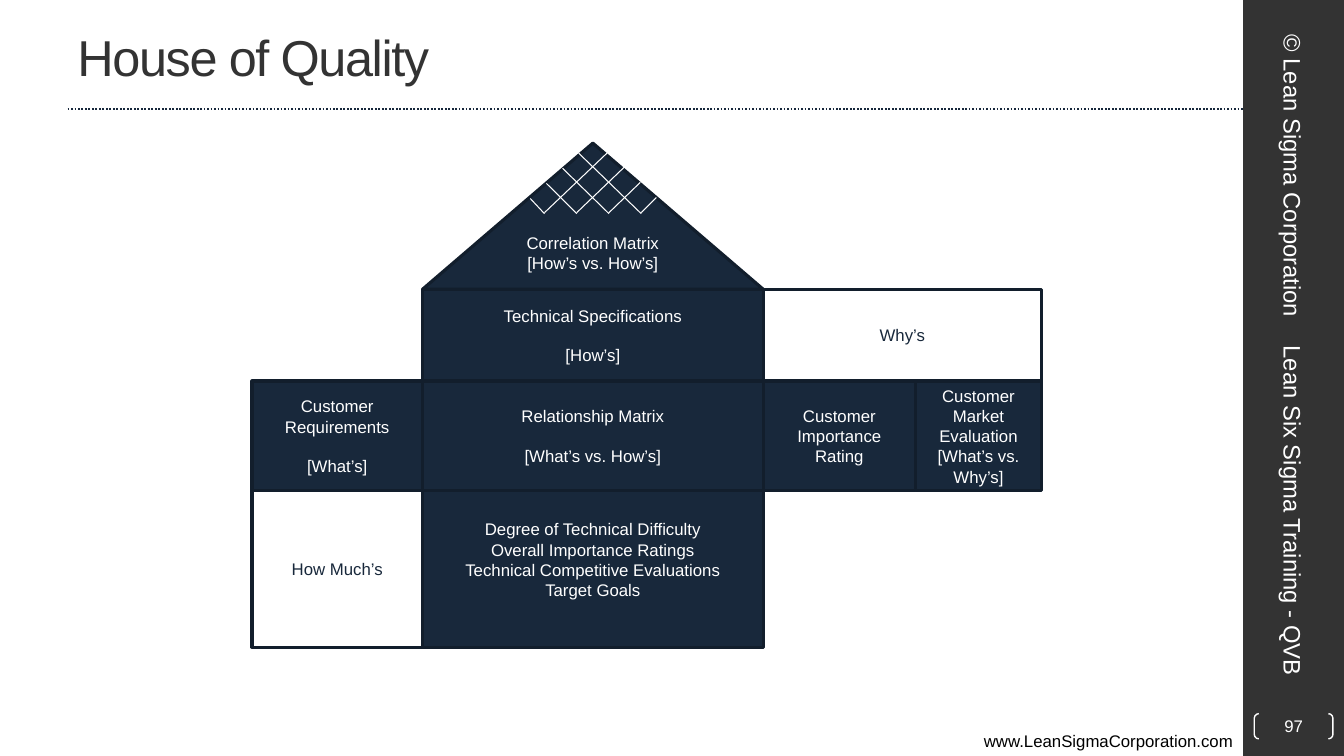
from lxml import etree
from pptx import Presentation
from pptx.dml.color import RGBColor
from pptx.enum.dml import MSO_LINE
from pptx.enum.shapes import MSO_CONNECTOR, MSO_SHAPE
from pptx.enum.text import MSO_ANCHOR, PP_ALIGN
from pptx.oxml.ns import qn
from pptx.util import Inches, Pt

THEME = {
    "font": "Arial",
    "navy": RGBColor.from_string("18283B"),
    "edge": RGBColor.from_string("121E2C"),
    "rule": RGBColor.from_string("17273B"),
    "gray": RGBColor.from_string("333333"),
    "white": RGBColor.from_string("FFFFFF"),
    "black": RGBColor.from_string("000000"),
    "title": Pt(36), "side": Pt(17), "body": Pt(12),
    "gap": Pt(13.8),
}

prs = Presentation()
prs.slide_width, prs.slide_height = Inches(13.33), Inches(7.5)
s = prs.slides.add_slide(prs.slide_layouts[6])


def write(sp, lines, size, color, align=PP_ALIGN.CENTER, anchor=MSO_ANCHOR.MIDDLE):
    """Fill a shape with paragraphs; None leaves a line's gap before the next one."""
    tf = sp.text_frame
    tf.word_wrap, tf.vertical_anchor = True, anchor
    p, gap = None, False
    for line in lines:
        if line is None:
            gap = True
            continue
        p = tf.paragraphs[0] if p is None else tf.add_paragraph()
        p.alignment = align
        if gap:
            p.space_before, gap = THEME["gap"], False
        r = p.add_run()
        r.text = line
        r.font.name, r.font.size, r.font.color.rgb = THEME["font"], size, color
    return tf


def add_line(x1, y1, x2, y2, color, width):
    cx = s.shapes.add_connector(MSO_CONNECTOR.STRAIGHT, Inches(x1), Inches(y1),
                                Inches(x2), Inches(y2))
    cx.line.color.rgb, cx.line.width = color, Pt(width)
    etree.SubElement(cx._element.spPr, qn("a:effectLst"))
    return cx


# Side band and dotted rule
band = s.shapes.add_shape(MSO_SHAPE.RECTANGLE, Inches(12.33), 0, Inches(1), Inches(7.5))
band.shadow.inherit = False
band.fill.solid()
band.fill.fore_color.rgb = THEME["gray"]
band.line.fill.background()
add_line(0.67, 1.08, 12.33, 1.08, THEME["rule"], 1.25).line.dash_style = MSO_LINE.ROUND_DOT

# Title, web address and vertical texts
texts = [
    ("www.LeanSigmaCorporation.com", (0, 7.2, 12.33, 0.3), 0, "body", "black",
     PP_ALIGN.RIGHT, MSO_ANCHOR.TOP),
    ("House of Quality", (0.67, 0.03, 11.11, 1.05), 0, "title", "gray",
     PP_ALIGN.LEFT, MSO_ANCHOR.MIDDLE),
    ("© Lean Sigma Corporation", (11.24, 1.48, 3.17, 0.53), 90, "side", "white",
     PP_ALIGN.CENTER, MSO_ANCHOR.MIDDLE),
    ("Lean Six Sigma Training - QVB", (10.99, 4.9, 3.67, 0.53), 90, "side", "white",
     PP_ALIGN.LEFT, MSO_ANCHOR.MIDDLE),
]
for text, place, turn, size, color, align, anchor in texts:
    box = s.shapes.add_textbox(*map(Inches, place))
    box.rotation = turn
    tf = write(box, [text], THEME[size], THEME[color], align, anchor)
    if size == "title":
        tf.paragraphs[0].runs[0].font._element.set("spc", "-100")

# Page number in brackets
page = s.shapes.add_shape(MSO_SHAPE.DOUBLE_BRACKET, Inches(12.44), Inches(7.08),
                          Inches(0.78), Inches(0.25))
page.adjustments[0] = 0.179
page.shadow.inherit = False
page.fill.background()
page.line.color.rgb, page.line.width = THEME["white"], Pt(1)
tf = write(page, ["97"], THEME["body"], THEME["white"])
tf.margin_left = tf.margin_right = tf.margin_top = tf.margin_bottom = 0

# House: each part spans grid columns and one grid row
COLS = [2.5, 4.19, 7.57, 9.08, 10.33]
ROWS = [1.42, 2.87, 3.78, 4.87, 6.42]
parts = [  # first column, end column, row, dark, lines
    (1, 2, 0, True, ["Correlation Matrix [How’s vs. How’s]"]),
    (1, 2, 1, True, ["Technical Specifications", None, "[How’s]"]),
    (1, 2, 2, True, ["Relationship Matrix", None, "[What’s vs. How’s]"]),
    (1, 2, 3, True, ["Degree of Technical Difficulty", "Overall Importance Ratings",
                     "Technical Competitive Evaluations", "Target Goals"]),
    (0, 1, 2, True, ["Customer Requirements", None, "[What’s]"]),
    (0, 1, 3, False, ["How Much’s"]),
    (2, 4, 1, False, ["Why’s"]),
    (2, 3, 2, True, ["Customer Importance Rating"]),
    (3, 4, 2, True, ["Customer Market Evaluation", "[What’s vs. Why’s]"]),
]
for c1, c2, row, dark, lines in parts:
    kind = MSO_SHAPE.RECTANGLE if row else MSO_SHAPE.ISOSCELES_TRIANGLE
    sp = s.shapes.add_shape(kind, Inches(COLS[c1]), Inches(ROWS[row]),
                            Inches(COLS[c2] - COLS[c1]), Inches(ROWS[row + 1] - ROWS[row]))
    sp.shadow.inherit = False
    sp.fill.solid()
    sp.fill.fore_color.rgb = THEME["navy" if dark else "white"]
    sp.line.color.rgb, sp.line.width = THEME["edge"], Pt(2.25)
    tf = write(sp, lines, THEME["body"], THEME["white" if dark else "navy"])
    if len(lines) == 4:  # the list of goals sits a little above the middle
        tf.margin_bottom = Inches(0.24)

# Roof lattice: four rising and four falling lines
for i in range(4):
    add_line(5.4 + 0.32 * i, 2.11, 6.03 + 0.16 * i, 1.51 + 0.15 * i, THEME["white"], 0.75)
    add_line(5.74 - 0.16 * i, 1.52 + 0.15 * i, 6.36 - 0.32 * i, 2.12, THEME["white"], 0.75)

prs.save("out.pptx")
